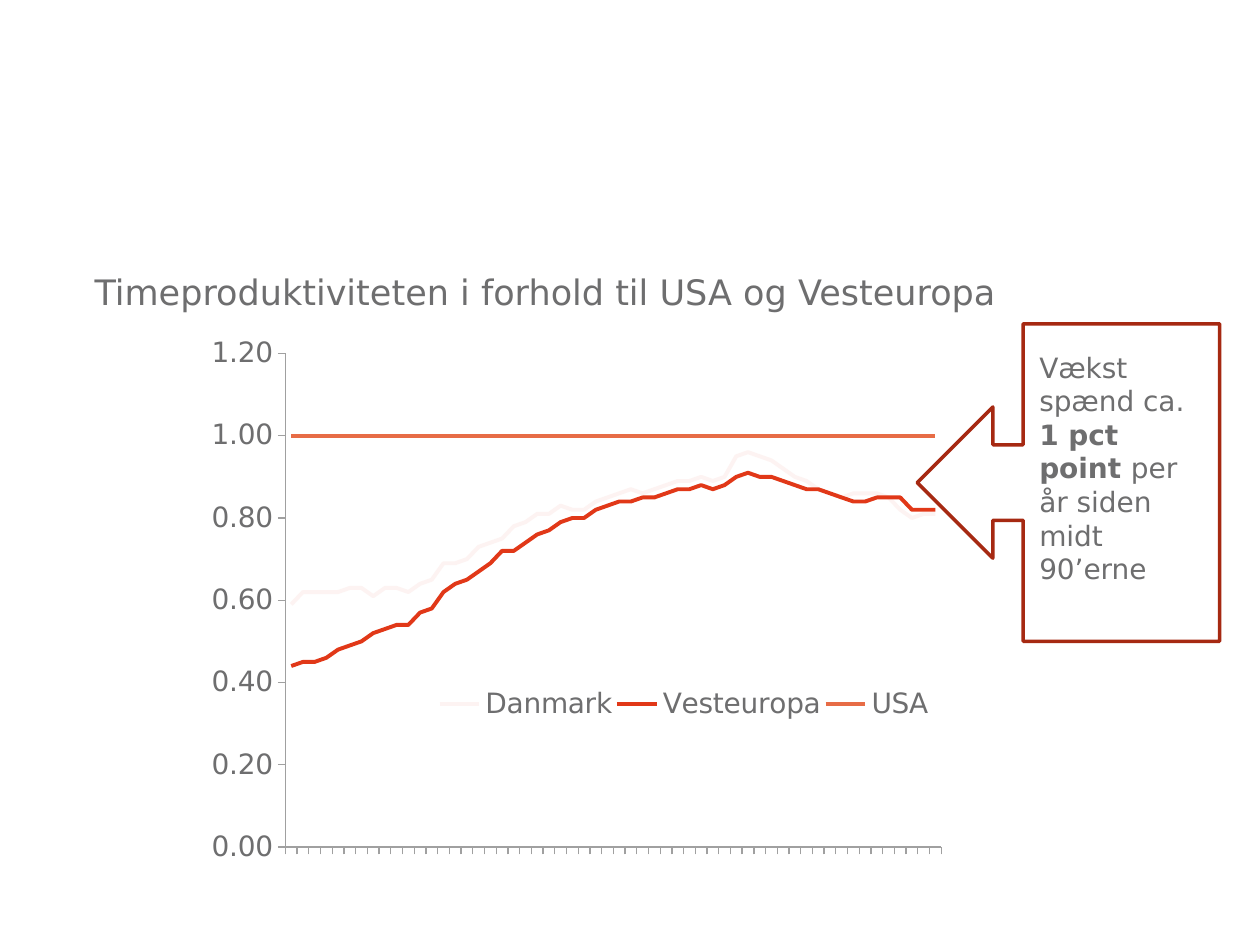
"""Build a slide on hourly productivity relative to the USA and Western Europe."""
import pptx
import pptx.chart.data
import pptx.dml.color
import pptx.enum.chart
import pptx.enum.shapes
import pptx.enum.text
import pptx.oxml
import pptx.util
from pptx.util import Inches

FONT = "DejaVu Sans"
COLORS = {
    "text": "6E6E6F",
    "axis": "A0A0A0",
    "callout": "A62912",
    "Danmark": "FDF3F2",
    "Vesteuropa": "E13818",
    "USA": "E76C46",
}
YEARS = range(1956, 2012)
SERIES = {
    "Danmark": [
        0.59, 0.62, 0.62, 0.62, 0.62, 0.63, 0.63, 0.61, 0.63, 0.63, 0.62, 0.64, 0.65, 0.69,
        0.69, 0.70, 0.73, 0.74, 0.75, 0.78, 0.79, 0.81, 0.81, 0.83, 0.82, 0.82, 0.84, 0.85,
        0.86, 0.87, 0.86, 0.87, 0.88, 0.89, 0.89, 0.90, 0.89, 0.90, 0.95, 0.96, 0.95, 0.94,
        0.92, 0.90, 0.89, 0.87, 0.86, 0.85, 0.86, 0.86, 0.86, 0.85, 0.82, 0.80, 0.81, 0.81,
    ],
    "Vesteuropa": [
        0.44, 0.45, 0.45, 0.46, 0.48, 0.49, 0.50, 0.52, 0.53, 0.54, 0.54, 0.57, 0.58, 0.62,
        0.64, 0.65, 0.67, 0.69, 0.72, 0.72, 0.74, 0.76, 0.77, 0.79, 0.80, 0.80, 0.82, 0.83,
        0.84, 0.84, 0.85, 0.85, 0.86, 0.87, 0.87, 0.88, 0.87, 0.88, 0.90, 0.91, 0.90, 0.90,
        0.89, 0.88, 0.87, 0.87, 0.86, 0.85, 0.84, 0.84, 0.85, 0.85, 0.85, 0.82, 0.82, 0.82,
    ],
    "USA": [1] * len(YEARS),
}


def rgb(name):
    return pptx.dml.color.RGBColor.from_string(COLORS[name])


def style_font(font, size):
    font.name = FONT
    font.size = pptx.util.Pt(size)
    font.color.rgb = rgb("text")


def style_line(line, color, width):
    line.color.rgb = rgb(color)
    line.width = pptx.util.Pt(width)


def add_text(slide, box, runs, size, inset=None, anchor="TOP"):
    tf = slide.shapes.add_textbox(*map(Inches, box)).text_frame
    tf.word_wrap = True
    tf.vertical_anchor = getattr(pptx.enum.text.MSO_ANCHOR, anchor)
    if inset is not None:
        tf.margin_left = tf.margin_right = tf.margin_top = tf.margin_bottom = Inches(inset)
    p = tf.paragraphs[0]
    for text, bold in runs:
        r = p.add_run()
        r.text = text
        style_font(r.font, size)
        r.font.bold = bold


def layout_xml(x, y, w, h, inner=False):
    target = '<c:layoutTarget val="inner"/>' if inner else ""
    modes = '<c:xMode val="edge"/><c:yMode val="edge"/>'
    sizes = "".join(f'<c:{k} val="{v}"/>' for k, v in zip("xywh", (x, y, w, h)))
    return pptx.oxml.parse_xml(
        '<c:layout xmlns:c="http://schemas.openxmlformats.org/drawingml/2006/chart">'
        f"<c:manualLayout>{target}{modes}{sizes}</c:manualLayout></c:layout>"
    )


def place(element, layout, index):
    for old in element.xpath("c:layout"):
        element.remove(old)
    element.insert(index, layout)


def style_axis(axis):
    axis.has_major_gridlines = False
    axis.major_tick_mark = pptx.enum.chart.XL_TICK_MARK.OUTSIDE
    axis.minor_tick_mark = pptx.enum.chart.XL_TICK_MARK.NONE
    style_line(axis.format.line, "axis", 0.75)


def add_line_chart(slide, box):
    data = pptx.chart.data.CategoryChartData(number_format="0.00")
    data.categories = [f" {year}" for year in YEARS]
    for name, values in SERIES.items():
        data.add_series(name, values)
    kind = pptx.enum.chart.XL_CHART_TYPE.LINE
    chart = slide.shapes.add_chart(kind, *map(Inches, box), data).chart
    chart.has_title = False
    style_font(chart.font, 16)
    plot = chart.plots[0]
    plot.vary_by_categories = False
    for series in plot.series:
        series.smooth = False
        style_line(series.format.line, series.name, 2.25)

    style_axis(chart.category_axis)
    chart.category_axis.tick_label_position = pptx.enum.chart.XL_TICK_LABEL_POSITION.NONE
    axis = chart.value_axis
    style_axis(axis)
    axis.minimum_scale, axis.maximum_scale, axis.major_unit = 0, 1.2, 0.2
    axis.tick_labels.number_format = "#,##0.00"
    axis.tick_labels.number_format_is_linked = False

    chart.has_legend = True
    legend = chart.legend
    legend.position = pptx.enum.chart.XL_LEGEND_POSITION.RIGHT
    legend.include_in_layout = False
    style_font(legend.font, 16)
    place(legend._element, layout_xml(0.29, 0.61, 0.6, 0.06), 1)
    place(chart._chartSpace.chart.plotArea, layout_xml(0.11, 0.05, 0.79, 0.83, True), 0)


def add_callout(slide, box):
    kind = pptx.enum.shapes.MSO_SHAPE.LEFT_ARROW_CALLOUT
    sp = slide.shapes.add_shape(kind, *map(Inches, box))
    sp.shadow.inherit = False
    sp.fill.background()
    style_line(sp.line, "callout", 2)


def main():
    prs = pptx.Presentation()
    prs.slide_width, prs.slide_height = Inches(10), Inches(7.5)
    s = prs.slides.add_slide(prs.slide_layouts[6])
    title = "Timeproduktiviteten i forhold til USA og Vesteuropa"
    add_text(s, (0.75, 1.78, 8.82, 0.7), [(title, False)], 20, 0, "BOTTOM")
    add_line_chart(s, (1.54, 2.57, 6.59, 4.72))
    add_callout(s, (7.28, 2.57, 2.4, 2.52))
    note = [
        ("Vækst spænd ca. ", False),
        ("1 pct point ", True),
        ("per år siden midt 90’erne", False),
    ]
    add_text(s, (8.15, 2.73, 1.5, 1.99), note, 16)
    prs.save("out.pptx")


if __name__ == "__main__":
    main()
